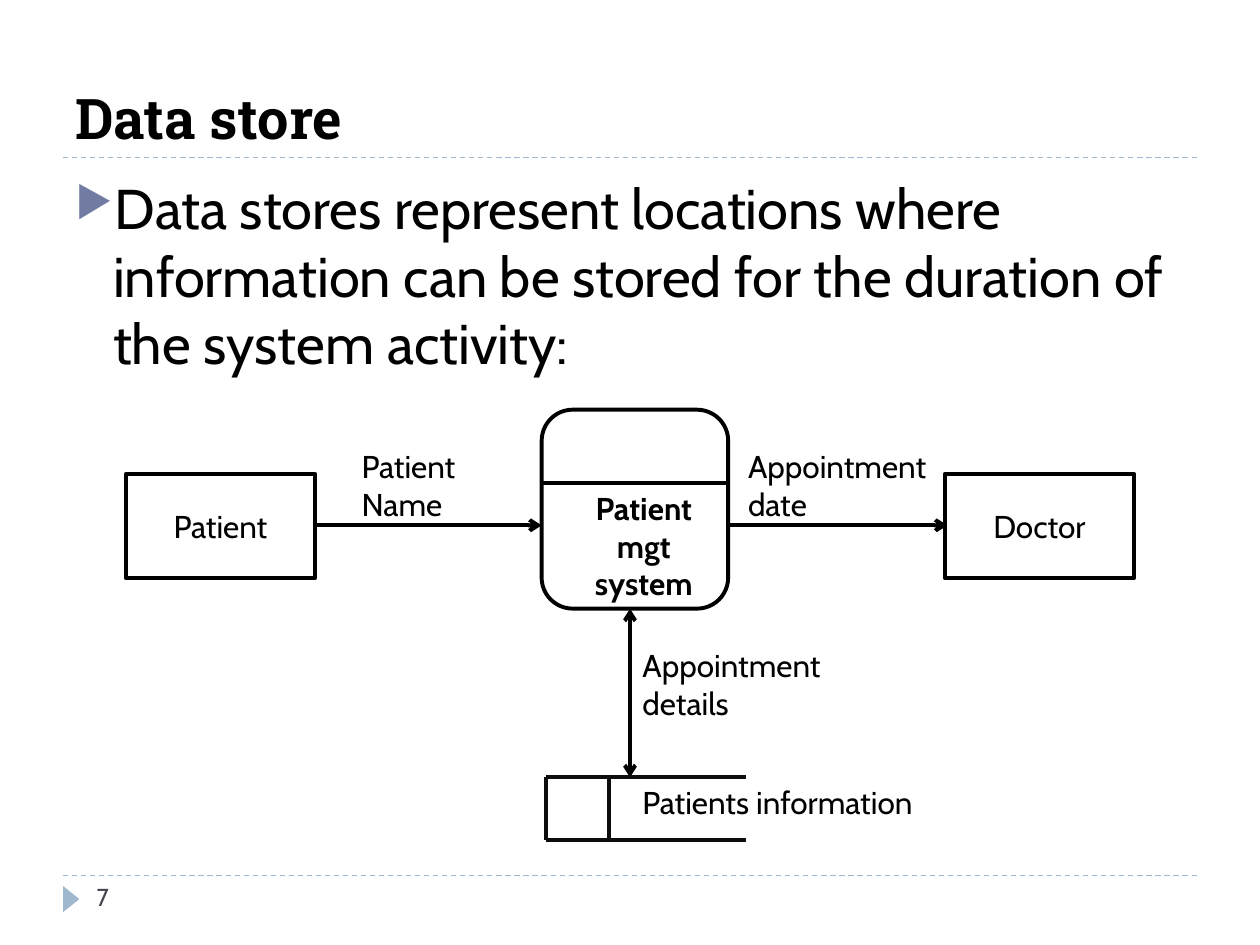
from dataclasses import dataclass, field

from lxml import etree
from pptx import Presentation
from pptx.dml.color import RGBColor
from pptx.enum.dml import MSO_LINE
from pptx.enum.shapes import MSO_CONNECTOR, MSO_SHAPE
from pptx.enum.text import MSO_ANCHOR, PP_ALIGN
from pptx.oxml.ns import qn
from pptx.util import Cm, Pt

STRAIGHT = MSO_CONNECTOR.STRAIGHT
RECT, ROUNDED, TRIANGLE = (MSO_SHAPE.RECTANGLE, MSO_SHAPE.ROUNDED_RECTANGLE,
                           MSO_SHAPE.ISOSCELES_TRIANGLE)
TOP, MIDDLE, BOTTOM = MSO_ANCHOR.TOP, MSO_ANCHOR.MIDDLE, MSO_ANCHOR.BOTTOM
LEFT, CENTER = PP_ALIGN.LEFT, PP_ALIGN.CENTER
DASH = MSO_LINE.DASH


@dataclass(frozen=True)
class Theme:
    ink: str = "000000"
    store_ink: str = "0D0D0D"
    paper: str = "FFFFFF"
    rule: str = "9FB8CD"
    bullet: str = "727CA3"
    page_number: str = "464653"
    heading_font: str = "Roboto Slab"
    body_font: str = "Cabin"
    heading_size: int = 32
    label_size: int = 18
    number_size: int = 14
    stroke: float = 2.25
    thin_stroke: float = 0.75


THEME = Theme()


@dataclass(frozen=True)
class Box:
    """Left, top, width and height in centimetres."""
    left: float
    top: float
    width: float
    height: float

    @property
    def right(self) -> float:
        return self.left + self.width

    @property
    def bottom(self) -> float:
        return self.top + self.height

    def lengths(self) -> list:
        return [Cm(v) for v in (self.left, self.top, self.width, self.height)]


@dataclass(frozen=True)
class Label:
    text: str
    box: Box
    size: int = THEME.label_size
    font: str = THEME.body_font
    color: str = THEME.ink
    bold: bool = False
    align: int = LEFT
    anchor: int = TOP


@dataclass(frozen=True)
class Line:
    """End points in centimetres; ends names the ends with an arrowhead."""
    start: tuple[float, float]
    end: tuple[float, float]
    color: str = THEME.ink
    ends: tuple[str, ...] = field(default=())
    width: float = THEME.stroke
    dash: int | None = None


def write_text(frame, label: Label):
    frame.word_wrap = True
    frame.vertical_anchor = label.anchor
    paragraph = frame.paragraphs[0]
    paragraph.alignment = label.align
    run = paragraph.add_run()
    run.text = label.text
    font_format = {"name": label.font, "size": Pt(label.size), "bold": label.bold}
    for name, value in font_format.items():
        setattr(run.font, name, value)
    run.font.color.rgb = RGBColor.from_string(label.color)
    return paragraph


def draw_label(slide, label: Label):
    return write_text(slide.shapes.add_textbox(*label.box.lengths()).text_frame, label)


def draw_shape(slide, kind: int, box: Box, fill: str, outline: str | None = None):
    shape = slide.shapes.add_shape(kind, *box.lengths())
    shape.shadow.inherit = False
    shape.fill.solid()
    shape.fill.fore_color.rgb = RGBColor.from_string(fill)
    if outline:
        shape.line.color.rgb = RGBColor.from_string(outline)
        shape.line.width = Pt(THEME.stroke)
    else:
        shape.line.fill.background()
    return shape


def draw_line(slide, line: Line) -> None:
    points = [Cm(v) for v in (*line.start, *line.end)]
    connector = slide.shapes.add_connector(STRAIGHT, *points)
    connector.line.color.rgb = RGBColor.from_string(line.color)
    connector.line.width = Pt(line.width)
    if line.dash is not None:
        connector.line.dash_style = line.dash
    outline = connector.line._get_or_add_ln()
    for end in line.ends:
        etree.SubElement(outline, qn(f"a:{end}"), type="arrow")
    etree.SubElement(connector._element.spPr, qn("a:effectLst"))


def add_bullet(paragraph, symbol: str, color: str, percent: int, indent: float) -> None:
    properties = paragraph._p.get_or_add_pPr()
    properties.set("marL", str(Cm(indent)))
    properties.set("indent", str(-Cm(indent)))
    bullet_color = etree.SubElement(properties, qn("a:buClr"))
    etree.SubElement(bullet_color, qn("a:srgbClr"), val=color)
    etree.SubElement(properties, qn("a:buSzPct"), val=str(percent * 1000))
    etree.SubElement(properties, qn("a:buChar"), char=symbol)


# Layout of the diagram
PROCESS = Box(10.92, 8.26, 3.76, 4.01)
DIVIDER_Y = 9.73
FLOW_Y = 10.59
STORE = Box(11, 15.67, 4.04, 1.27)
STORE_AXIS = 12.7
FLOW_LABEL_Y = 8.89

ENTITIES = {"Patient": Box(2.54, 9.55, 3.81, 2.11),
            "Doctor": Box(19.05, 9.55, 3.81, 2.11)}

RULES = [Line((1.27, y), (24.13, y), THEME.rule, width=THEME.thin_stroke, dash=DASH)
         for y in (3.18, 17.65)]

FLOWS = [
    Line((6.15, FLOW_Y), (PROCESS.left, FLOW_Y), ends=("tailEnd",)),
    Line((PROCESS.right, FLOW_Y), (19.1, FLOW_Y), ends=("tailEnd",)),
    Line((STORE_AXIS, PROCESS.bottom), (STORE_AXIS, STORE.top),
         ends=("headEnd", "tailEnd")),
]

STORE_LINES = [
    *[Line((STORE.left, y), (STORE.right, y), THEME.store_ink)
      for y in (STORE.top, STORE.bottom)],
    *[Line((x, STORE.top), (x, STORE.bottom), THEME.store_ink)
      for x in (STORE.left, STORE.left + STORE.height)],
]

LABELS = [
    Label("Data store", Box(1.27, 0.43, 22.86, 2.74), THEME.heading_size,
          THEME.heading_font, bold=True, anchor=BOTTOM),
    Label("Patient mgt system", Box(11.61, DIVIDER_Y, 2.74, 2.57),
          bold=True, align=CENTER),
    Label("Patient Name", Box(7.04, FLOW_LABEL_Y, 3.28, 1.8)),
    Label("Appointment date", Box(14.83, FLOW_LABEL_Y, 4.52, 1.8)),
    Label("Appointment details", Box(STORE_AXIS, 12.9, 5.08, 1.8)),
    Label("Patients information", Box(STORE_AXIS, STORE.top, 6.15, 1.02)),
    Label("7", Box(1.7, 17.65, 5.51, 1.02), THEME.number_size,
          color=THEME.page_number),
]

STATEMENT = Label(
    "Data stores represent locations where information can be stored "
    "for the duration of the system activity:",
    Box(1.27, 3.38, 22.86, 13.72), THEME.heading_size)


def main() -> None:
    deck = Presentation()
    deck.slide_width, deck.slide_height = Cm(25.4), Cm(19.05)
    slide = deck.slides.add_slide(deck.slide_layouts[6])

    # Page frame
    for rule in RULES:
        draw_line(slide, rule)
    draw_shape(slide, TRIANGLE, Box(1.17, 17.96, 0.53, 0.33), THEME.rule).rotation = 90

    # Bulleted statement
    statement = draw_label(slide, STATEMENT)
    statement.space_before = Pt(6)
    add_bullet(statement, "▶", THEME.bullet, 76, 0.76)

    # Process, flows and data store
    draw_shape(slide, ROUNDED, PROCESS, THEME.paper, THEME.ink)
    divider = Line((PROCESS.left, DIVIDER_Y), (PROCESS.right, DIVIDER_Y))
    for line in (divider, *FLOWS, *STORE_LINES):
        draw_line(slide, line)

    # External entities
    for name, box in ENTITIES.items():
        entity = draw_shape(slide, RECT, box, THEME.paper, THEME.ink)
        write_text(entity.text_frame, Label(name, box, align=CENTER, anchor=MIDDLE))

    # Title, flow labels and page number
    for label in LABELS:
        draw_label(slide, label)

    deck.save("out.pptx")


if __name__ == "__main__":
    main()
